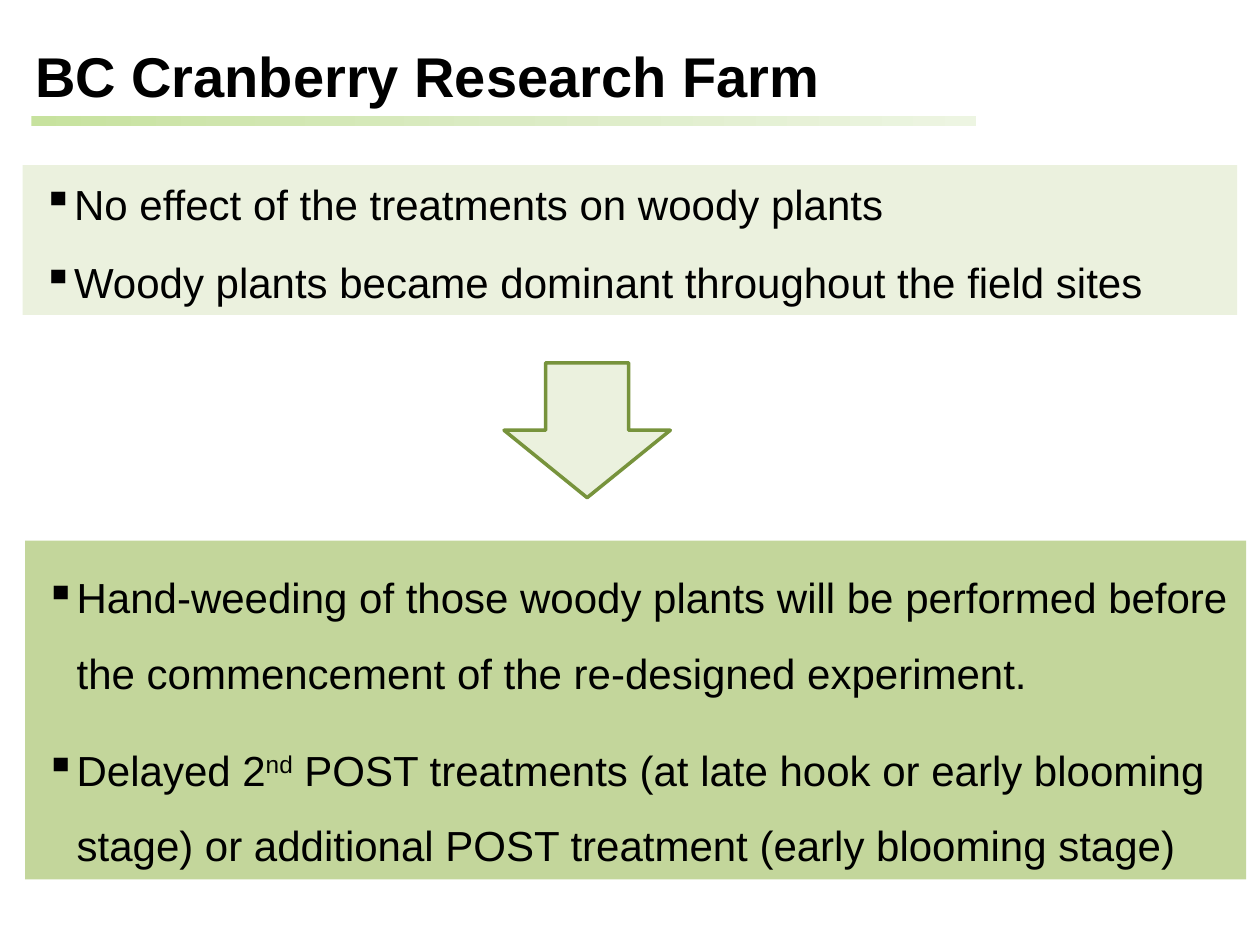
from copy import deepcopy

from lxml import etree
from pptx import Presentation
from pptx.dml.color import RGBColor
from pptx.enum.shapes import MSO_SHAPE
from pptx.enum.text import MSO_ANCHOR, PP_ALIGN
from pptx.oxml.ns import qn
from pptx.util import Inches, Pt

RECT = MSO_SHAPE.RECTANGLE
DOWN_ARROW = MSO_SHAPE.DOWN_ARROW
TOP = MSO_ANCHOR.TOP
LEFT = PP_ALIGN.LEFT

FONT = "Arial"
BLACK = "000000"
PALE_GREEN = "EBF1DE"
MID_GREEN = "C3D69B"
DARK_GREEN = "77933C"
RULE_STOPS = [(0, "C7E29E"), (0.5, "DBEBC4"), (1, "EDF5E2")]

# Each paragraph is a list of (text, is_superscript) runs.
FINDINGS = [
    [("No effect of the treatments on woody plants", False)],
    [("Woody plants became dominant throughout the field sites", False)],
]
NEXT_STEPS = [
    [("Hand-weeding of those woody plants will be performed before "
      "the commencement of the re-designed experiment.", False)],
    [("Delayed 2", False), ("nd", True),
     (" POST treatments (at late hook or early blooming stage) or "
      "additional POST treatment (early blooming stage)", False)],
]


def rgb(color):
    return RGBColor.from_string(color)


def set_font(font, size, bold=False):
    font.name = FONT
    font.size = Pt(size)
    font.bold = bold
    font.color.rgb = rgb(BLACK)


def add_shape(s, kind, box, fill=None, line=None):
    sp = s.shapes.add_shape(kind, *map(Inches, box))
    sp.shadow.inherit = False
    if fill:
        sp.fill.solid()
        sp.fill.fore_color.rgb = rgb(fill)
    if line:
        sp.line.color.rgb = rgb(line)
        sp.line.width = Pt(2)
    else:
        sp.line.fill.background()
    return sp


def add_title(s, text, box):
    tf = s.shapes.add_textbox(*map(Inches, box)).text_frame
    tf.word_wrap = True
    p = tf.paragraphs[0]
    p.text = text
    set_font(p.font, 32, bold=True)


def add_gradient_rule(s, box):
    sp = add_shape(s, RECT, box)
    sp.fill.gradient()
    sp.fill.gradient_angle = 0
    stop_list = sp._element.spPr.find(".//" + qn("a:gsLst"))
    stop_list.insert(1, deepcopy(stop_list[0]))
    for stop, (position, color) in zip(sp.fill.gradient_stops, RULE_STOPS):
        stop.position = position
        stop.color.rgb = rgb(color)


def set_bullet(p):
    pPr = p._p.get_or_add_pPr()
    pPr.set("marL", str(Inches(0.31)))
    pPr.set("indent", str(Inches(-0.25)))
    bullet = etree.Element(qn("a:buChar"), char="▪")
    pPr.insert_element_before(bullet, "a:tabLst", "a:defRPr", "a:extLst")


def add_bullet_panel(s, box, fill, paragraphs, line_spacing):
    tf = add_shape(s, RECT, box, fill).text_frame
    tf.word_wrap = True
    tf.vertical_anchor = TOP
    for i, runs in enumerate(paragraphs):
        p = tf.add_paragraph() if i else tf.paragraphs[0]
        p.alignment = LEFT
        p.line_spacing = line_spacing
        p.space_before = Pt(12)
        set_font(p.font, 24)
        set_bullet(p)
        for text, superscript in runs:
            r = p.add_run()
            r.text = text
            if superscript:
                r.font._element.set("baseline", "30000")


def main():
    prs = Presentation()
    prs.slide_width, prs.slide_height = Inches(10), Inches(7.5)
    s = prs.slides.add_slide(prs.slide_layouts[6])
    add_gradient_rule(s, (0.25, 0.92, 7.5, 0.08))
    add_title(s, "BC Cranberry Research Farm", (0.18, 0.28, 9.35, 0.64))
    add_bullet_panel(s, (0.18, 1.31, 9.64, 1.19), PALE_GREEN, FINDINGS, 1.14)
    add_shape(s, DOWN_ARROW, (4, 2.88, 1.32, 1.07), PALE_GREEN, DARK_GREEN)
    add_bullet_panel(s, (0.2, 4.29, 9.69, 2.69), MID_GREEN, NEXT_STEPS, 1.5)
    prs.save("out.pptx")


if __name__ == "__main__":
    main()
